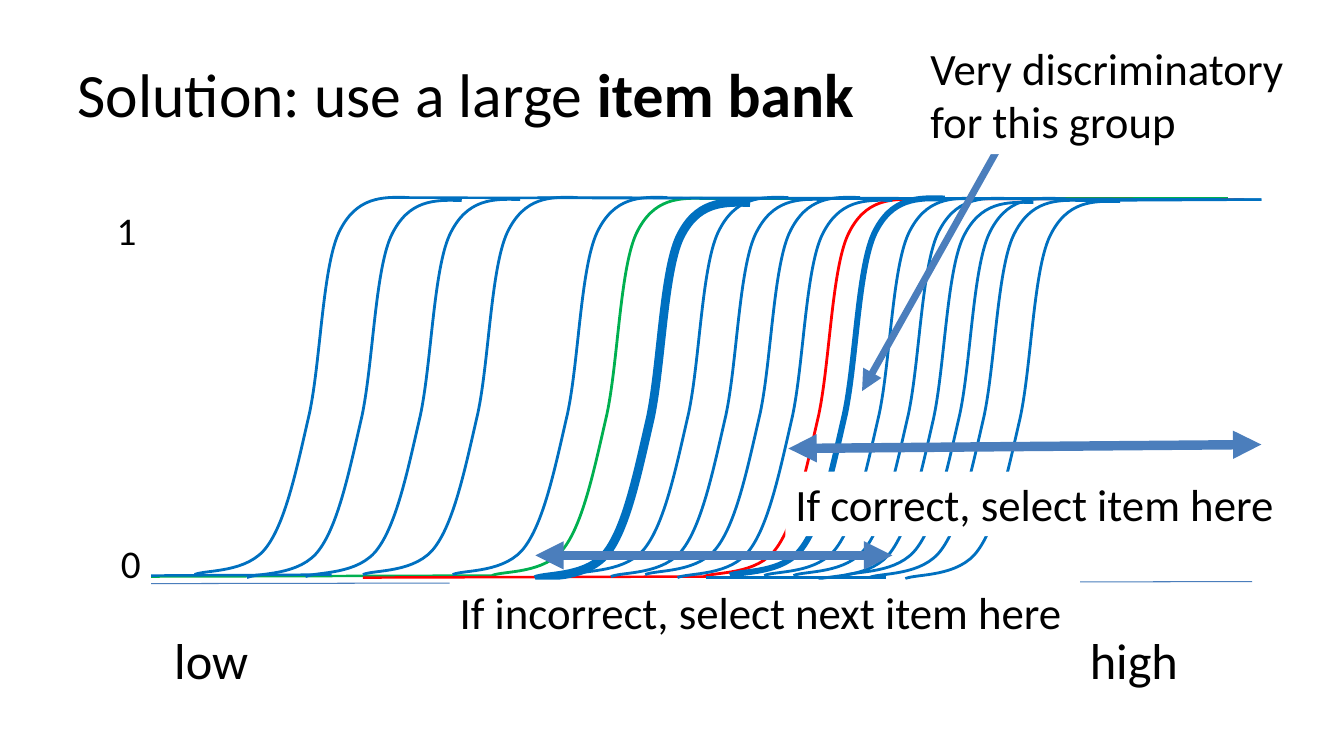
from lxml.etree import SubElement
from pptx import Presentation
from pptx.dml.color import RGBColor
from pptx.enum.shapes import MSO_CONNECTOR, MSO_SHAPE
from pptx.enum.text import MSO_ANCHOR, MSO_AUTO_SIZE, PP_ALIGN
from pptx.oxml.ns import qn
from pptx.util import Inches, Pt

HUES = {"text": "000000", "back": "FFFFFF", "arrow": "4B7EBC",
        "item": "0070C0", "low": "00B050", "high": "FF0000"}
FONT = "Calibri"

CURVE = [(2.13, 0), (1.86, -0.01), (1.6, -0.01), (1.43, 0.35), (1.27, 0.7),
         (1.25, 1.62), (1.14, 2.14), (1.02, 2.66), (0.91, 3.2), (0.72, 3.46),
         (0.53, 3.73), (0.11, 3.69), (0, 3.74)]

BANK = [(0.95, 0.03), (7.12, 0.03), (1.53, 0.02), (2.1, 0), (0.43, 0), (2.99, 0),
        (7.48, 0.04), (3.81, 0.05, 6.25), (4.19, 0), (4.56, 0.02), (4.9, 0),
        (5.22, 0.03), (5.74, 0.01, 4.25), (6.08, 0.01), (6.37, 0.01),
        (6.62, 0.05), (6.88, 0.01)]

GROUPS = [("low", (3.38, 0.01), [(5.44, 0.01, 10.68, 0.01), (0, 3.76, 3.4, 3.75)]),
          ("high", (5.48, 0.02), [(7.54, 0.01, 10.84, 0.02), (2.1, 3.77, 5.5, 3.76)])]

TAILS = [(3.83, 0, 9.07, 0.01), (0, 3.75, 1.79, 3.74), (9.25, 0.03, 11.01, 0.02),
         (5.5, 3.77, 7.29, 3.77), (2.38, 0, 11.01, 0.02)]


def color(name):
    return RGBColor.from_string(HUES[name])


def add_run(para, words, size, bold=None):
    run = para.add_run()
    run.text = words
    run.font.name = FONT
    run.font.size = Pt(size)
    run.font.bold = bold
    run.font.color.rgb = color("text")


def add_line(shapes, ends, hue, width, heads=()):
    line = shapes.add_connector(MSO_CONNECTOR.STRAIGHT, *map(Inches, ends))
    line.line.color.rgb = color(hue)
    line.line.width = Pt(width)
    for head in heads:
        SubElement(line.line._get_or_add_ln(), qn("a:" + head), type="triangle")
    SubElement(line._element.spPr, qn("a:effectLst"))


def add_curve(shapes, left, top, hue, width=2):
    points = [(Inches(left + x), Inches(top + y)) for x, y in CURVE]
    pen = shapes.build_freeform(*points[0])
    pen.add_line_segments(points[1:], close=False)
    curve = pen.convert_to_shape()
    curve.shadow.inherit = False
    curve.fill.background()
    curve.line.color.rgb = color(hue)
    curve.line.width = Pt(width)
    steps = list(curve._element.iter(qn("a:lnTo")))
    track = steps[0].getparent()
    for start in range(0, len(steps), 3):
        bend = SubElement(track, qn("a:cubicBezTo"))
        for step in steps[start:start + 3]:
            bend.append(step[0])
            track.remove(step)


def add_plot(slide, box):
    left, top = box[:2]

    def move(ends):
        return [at + (left, top)[i % 2] for i, at in enumerate(ends)]

    for hue, spot, tails in GROUPS:
        group = slide.shapes.add_group_shape()
        add_curve(group.shapes, *move(spot), hue)
        for ends in tails:
            add_line(group.shapes, move(ends), hue, 1.75)
    for x, y, *width in BANK:
        add_curve(slide.shapes, left + x, top + y, "item", *width)
    for ends in TAILS:
        add_line(slide.shapes, move(ends), "item", 1.75)


def add_title(slide, box):
    title = slide.shapes.title
    title.left, title.top, title.width, title.height = map(Inches, box)
    frame = title.text_frame
    frame.vertical_anchor = MSO_ANCHOR.MIDDLE
    para = frame.paragraphs[0]
    para.alignment = PP_ALIGN.LEFT
    add_run(para, "Solution: use a large ", 44)
    add_run(para, "item bank", 44, True)


def add_label(slide, box, lines, size, filled=False, wrap=False):
    area = list(map(Inches, box))
    if filled:
        label = slide.shapes.add_shape(MSO_SHAPE.RECTANGLE, *area)
        label.shadow.inherit = False
        label.fill.solid()
        label.fill.fore_color.rgb = color("back")
        label.line.fill.background()
    else:
        label = slide.shapes.add_textbox(*area)
    frame = label.text_frame
    frame.word_wrap = wrap
    frame.auto_size = MSO_AUTO_SIZE.SHAPE_TO_FIT_TEXT
    frame.vertical_anchor = MSO_ANCHOR.TOP
    for i, words in enumerate(lines):
        para = frame.add_paragraph() if i else frame.paragraphs[0]
        para.alignment = PP_ALIGN.LEFT
        add_run(para, words, size)


def add_axis(slide, box):
    left, top, width, height = box
    base = top + height
    add_line(slide.shapes, (left, base, left + width, base - 0.02), "arrow", 0.75)
    add_label(slide, (left + 0.13, base + 0.4, 0.94, 0.71), ["low"], 36)
    add_label(slide, (left + 9.21, base + 0.4, 1.09, 0.71), ["high"], 36)
    add_label(slide, (left - 0.4, base - 0.49, 0.4, 0.57), ["0"], 28)
    add_label(slide, (left - 0.44, top + 0.04, 0.4, 0.57), ["1"], 28)


def add_notes(slide, box):
    left, top = box[:2]
    both = ("headEnd", "tailEnd")
    notes = [
        ((3.36, 4.1, 8.05, 4.06), 6.75, both, (3.33, 4.33, 5.17, 0.64),
         ["If correct, select item here"], False),
        ((5.53, 0.96, 4.09, 3.53), 5, both[1:], (4.67, 0, 3.74, 1.18),
         ["Very discriminatory", "for this group"], False),
        ((0.85, 5.16, 4.39, 5.16), 6.75, both, (0, 5.4, 6.25, 0.64),
         ["If incorrect, select next item here"], True)]
    for (x1, y1, x2, y2), width, heads, (x, y, w, h), lines, wrap in notes:
        ends = (left + x1, top + y1, left + x2, top + y2)
        add_line(slide.shapes, ends, "arrow", width, heads)
        add_label(slide, (left + x, top + y, w, h), lines, 32, True, wrap)


def main():
    deck = Presentation()
    deck.slide_width, deck.slide_height = Inches(13.33), Inches(7.5)
    slide = deck.slides.add_slide(deck.slide_layouts[5])
    add_title(slide, (0.67, 0.3, 12.46, 1.25))
    add_axis(slide, (1.5, 1.96, 10.92, 3.83))
    add_plot(slide, (1.5, 1.96, 11.01, 3.79))
    add_notes(slide, (4.46, 0.35, 8.5, 6.04))
    deck.save("out.pptx")


if __name__ == "__main__":
    main()
